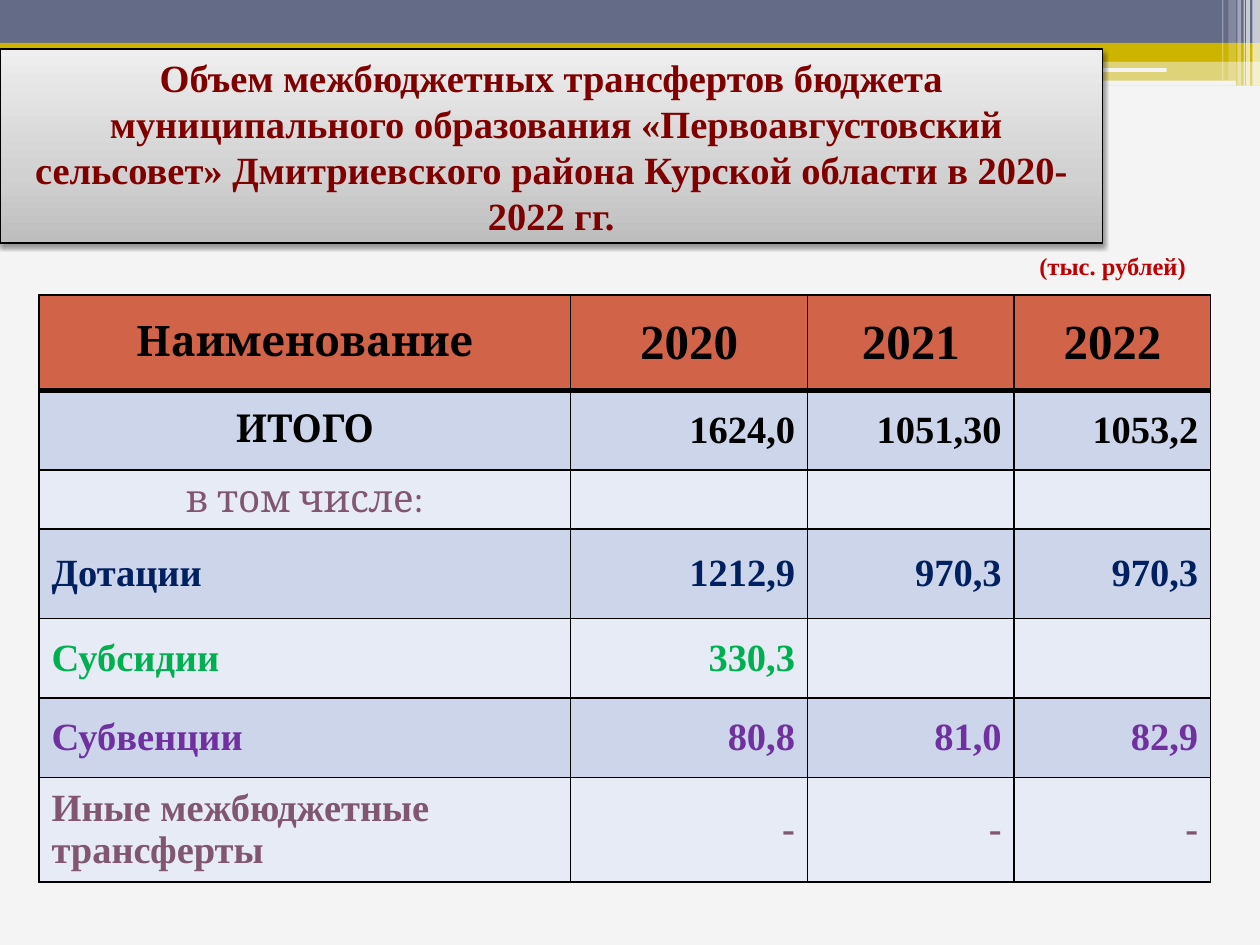
from dataclasses import dataclass

from lxml.etree import SubElement
from pptx import Presentation
from pptx.dml.color import RGBColor
from pptx.enum.shapes import MSO_SHAPE
from pptx.enum.text import MSO_ANCHOR, PP_ALIGN
from pptx.oxml import parse_xml
from pptx.oxml.ns import nsdecls, qn
from pptx.util import Inches, Pt


@dataclass(frozen=True)
class Theme:
    paper: str = "F4F4F4"
    slate: str = "646B86"
    gold: str = "CCB400"
    white: str = "FFFFFF"
    black: str = "000000"
    maroon: str = "800000"
    red: str = "C00000"
    header: str = "D16349"
    bands: tuple = ("CCD5EA", "E7EBF5")
    navy: str = "002060"
    green: str = "00B050"
    violet: str = "7030A0"
    plum: str = "805671"
    serif: str = "Times New Roman"
    label: str = "Cambria"
    title_size: float = 22
    unit_size: float = 14
    name_size: float = 24
    year_size: float = 28
    body_size: float = 22


T = Theme()
COLS, ROWS = 100, 75
CELL = Inches(0.1)

# Label, values, colour, label font, label alignment, bold
TABLE_ROWS = [
    ("ИТОГО", ("1624,0", "1051,30", "1053,2"), T.black, T.label, PP_ALIGN.CENTER, True),
    ("в том числе:", ("", "", ""), T.plum, T.label, PP_ALIGN.CENTER, False),
    ("Дотации", ("1212,9", "970,3", "970,3"), T.navy, T.serif, PP_ALIGN.LEFT, True),
    ("Субсидии", ("330,3", "", ""), T.green, T.serif, PP_ALIGN.LEFT, True),
    ("Субвенции", ("80,8", "81,0", "82,9"), T.violet, T.serif, PP_ALIGN.LEFT, True),
    ("Иные межбюджетные трансферты", ("-", "-", "-"), T.plum, T.serif, PP_ALIGN.LEFT, True),
]


def grid(*units):
    """Turn grid columns and rows into slide lengths."""
    return [round(u * CELL) for u in units]


def write(tf, text, size, color, font=T.serif, align=PP_ALIGN.LEFT, bold=True):
    p = tf.paragraphs[0]
    p.text = text
    p.alignment = align
    for r in p.runs:
        r.font.size = Pt(size)
        r.font.name = font
        r.font.bold = bold
        r.font.color.rgb = RGBColor.from_string(color)


def add_bar(slide, box, color, alpha=100, rounded=False):
    kind = MSO_SHAPE.ROUNDED_RECTANGLE if rounded else MSO_SHAPE.RECTANGLE
    sp = slide.shapes.add_shape(kind, *grid(*box))
    sp.shadow.inherit = False
    sp.line.fill.background()
    sp.fill.solid()
    sp.fill.fore_color.rgb = RGBColor.from_string(color)
    if alpha < 100:
        clr = sp._element.spPr.find(qn("a:solidFill"))[0]
        SubElement(clr, qn("a:alpha"), val=str(alpha * 1000))


def add_band(slide, box):
    """Coloured strips across the top, with pale stripes at the right end."""
    x, y, w, h = box
    right, half = x + w, 0.41 * w
    # Horizontal strips
    add_bar(slide, (x, y + 4, w, 0.9), T.gold, 50)
    add_bar(slide, (x, y, w, 3.4), T.slate)
    add_bar(slide, (x, y + 3.4, w, 1), T.gold)
    add_bar(slide, (right - half, y + 3.9, half, 1), T.gold)
    add_bar(slide, (right - half, y + 4.8, half, 2), T.gold, 50)
    # Thin rounded rules
    add_bar(slide, (x + 59.1, y + 5.4, 33.5, 0.3), T.paper, rounded=True)
    add_bar(slide, (x + 80.6, y + 6.4, 17.5, 0.4), T.paper, rounded=True)
    # Vertical stripes: distance from the right edge, width, height, opacity
    for gap, width, height, alpha in [
        (0.6, 0.6, h, 65), (1.1, 0.3, h, 65), (1.3, 0.1, h, 60),
        (1.8, 0.3, h, 40), (2.5, 0.6, h - 0.4, 20), (3, 0.1, h - 0.4, 30),
    ]:
        add_bar(slide, (right - gap, y, width, height), T.white, alpha)


def add_title(slide, box):
    sp = slide.shapes.add_shape(MSO_SHAPE.RECTANGLE, *grid(*box))
    sp.line.color.rgb = RGBColor.from_string(T.black)
    sp.line.width = Pt(0.75)
    # Grey gradient, darkest at the bottom
    spPr = sp._element.spPr
    stops = "".join(
        f'<a:gs pos="{pos * 1000}"><a:srgbClr val="{color}"/></a:gs>'
        for pos, color in [(0, "BDBDBD"), (35, "D1D1D1"), (100, "EEEEEE")])
    spPr.find(qn("a:ln")).addprevious(parse_xml(
        f'<a:gradFill {nsdecls("a")} rotWithShape="1"><a:gsLst>{stops}</a:gsLst>'
        '<a:lin ang="16200000" scaled="1"/></a:gradFill>'))
    # Soft shadow below
    spPr.append(parse_xml(
        f'<a:effectLst {nsdecls("a")}><a:outerShdw blurRad="{Pt(3.1)}" '
        f'dist="{Pt(1.6)}" dir="5400000" rotWithShape="0">'
        f'<a:srgbClr val="{T.black}"><a:alpha val="38000"/></a:srgbClr>'
        '</a:outerShdw></a:effectLst>'))
    tf = sp.text_frame
    tf.word_wrap = True
    tf.vertical_anchor = MSO_ANCHOR.MIDDLE
    write(tf, "Объем межбюджетных трансфертов бюджета\n муниципального образования "
          "«Первоавгустовский сельсовет» Дмитриевского района Курской области "
          "в 2020-2022 гг.", T.title_size, T.maroon, align=PP_ALIGN.CENTER)


def add_unit(slide, box):
    tf = slide.shapes.add_textbox(*grid(*box)).text_frame
    tf.word_wrap = True
    write(tf, "(тыс. рублей)", T.unit_size, T.red)


def style_cell(cell, fill, top=1, bottom=1):
    cell.vertical_anchor = MSO_ANCHOR.MIDDLE
    tcPr = cell._tc.get_or_add_tcPr()
    for side, width in (("L", 1), ("R", 1), ("T", top), ("B", bottom)):
        ln = SubElement(tcPr, qn(f"a:ln{side}"), w=str(Pt(width)))
        SubElement(SubElement(ln, qn("a:solidFill")), qn("a:srgbClr"), val=T.black)
    cell.fill.solid()
    cell.fill.fore_color.rgb = RGBColor.from_string(fill)


def add_transfers(slide, box, widths, heights):
    table = slide.shapes.add_table(len(heights), len(widths), *grid(*box)).table
    for col, width in zip(table.columns, grid(*widths)):
        col.width = width
    for row, height in zip(table.rows, grid(*heights)):
        row.height = height
    # Header
    for c, text in enumerate(("Наименование", "2020", "2021", "2022")):
        cell = table.cell(0, c)
        style_cell(cell, T.header, bottom=3)
        size, font = (T.year_size, T.serif) if c else (T.name_size, T.label)
        write(cell.text_frame, text, size, T.black, font, PP_ALIGN.CENTER)
    # Body, in alternating bands
    for i, (label, values, color, font, align, bold) in enumerate(TABLE_ROWS):
        for c, text in enumerate((label, *values)):
            cell = table.cell(i + 1, c)
            style_cell(cell, T.bands[i % 2], top=1 if i else 3)
            if c:
                font, align = T.serif, PP_ALIGN.RIGHT
            write(cell.text_frame, text, T.body_size, color, font, align, bold)


def main():
    prs = Presentation()
    prs.slide_width, prs.slide_height = grid(COLS, ROWS)
    s = prs.slides.add_slide(prs.slide_layouts[6])
    s.background.fill.solid()
    s.background.fill.fore_color.rgb = RGBColor.from_string(T.paper)
    add_band(s, (0, 0, COLS, 6.8))
    add_transfers(s, (3.1, 23.4, 93, 46.5), (42.2, 18.8, 16.4, 15.6),
                  (7.6, 6.3, 4.7, 7.1, 6.3, 6.3, 8.3))
    add_title(s, (0, 3.9, 87.5, 15.4))
    add_unit(s, (81.5, 19.4, 14.2, 3.3))
    prs.save("out.pptx")


if __name__ == "__main__":
    main()
